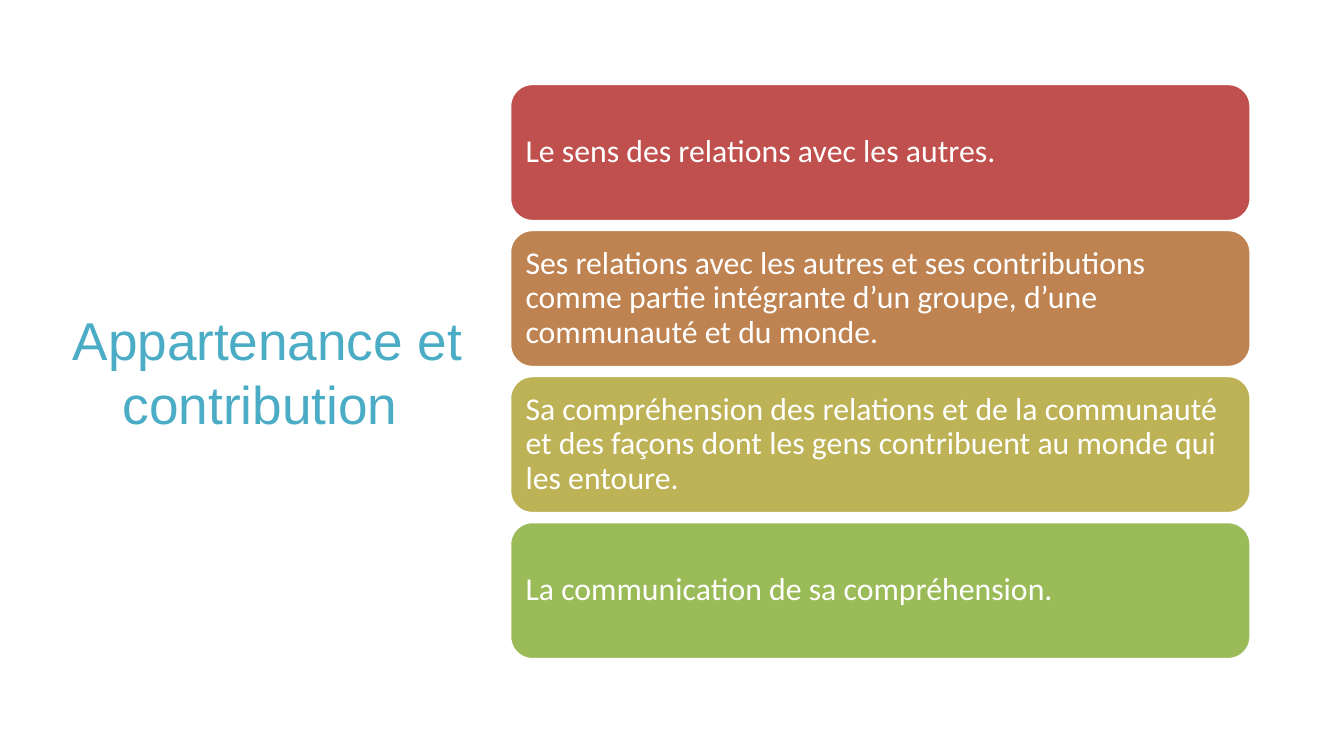
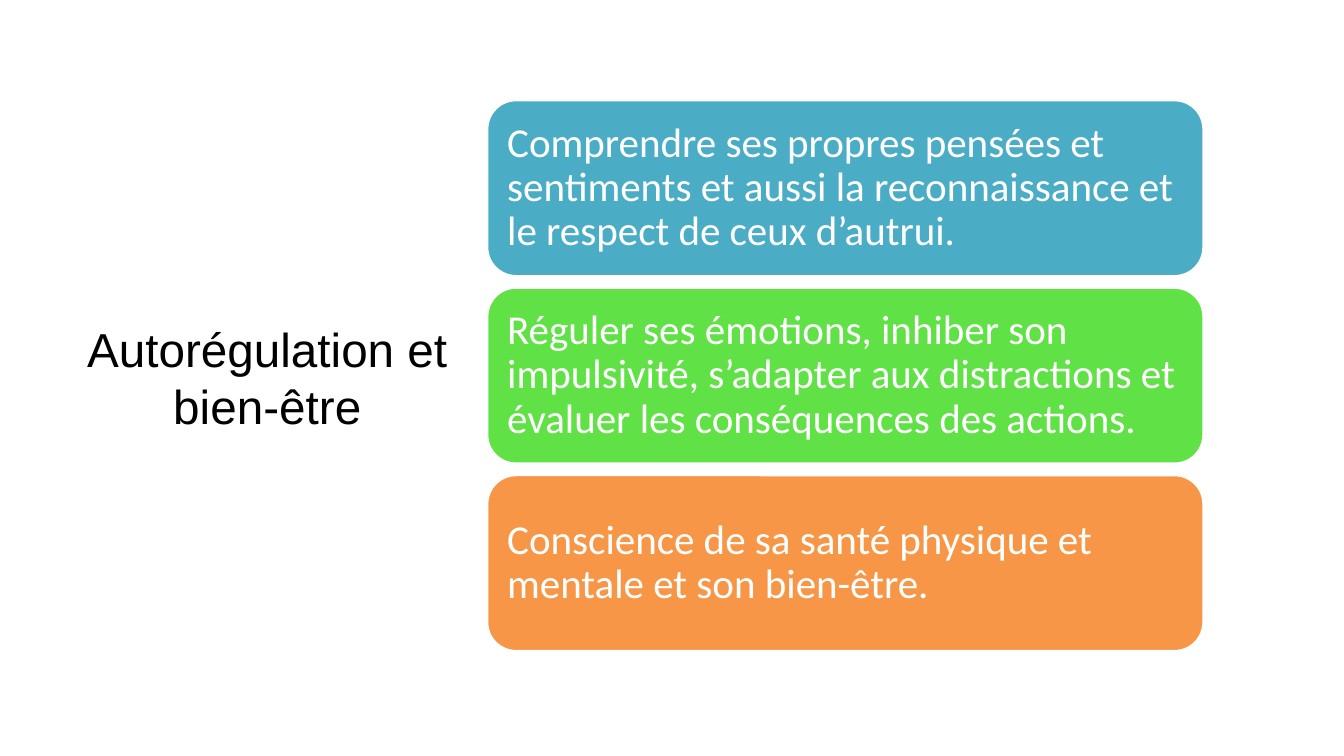
from pptx import Presentation
from pptx.dml.color import RGBColor
from pptx.enum.shapes import MSO_SHAPE
from pptx.enum.text import MSO_ANCHOR, PP_ALIGN
from pptx.util import Inches, Pt

WHITE = RGBColor(0xFF, 0xFF, 0xFF)
BLACK = RGBColor(0x00, 0x00, 0x00)
RED = RGBColor(0xC0, 0x50, 0x4D)
BROWN = RGBColor(0xBE, 0x83, 0x51)
OLIVE = RGBColor(0xBD, 0xB2, 0x55)
GREEN = RGBColor(0x9B, 0xBB, 0x59)
TEAL = RGBColor(0x4B, 0xAC, 0xC6)
LIME = RGBColor(0x60, 0xE1, 0x46)
ORANGE = RGBColor(0xF7, 0x96, 0x46)


def set_text(sp, text, font, size, color, align=PP_ALIGN.LEFT, inset=0.08, spacing=1.0):
    tf = sp.text_frame
    tf.word_wrap = True
    tf.vertical_anchor = MSO_ANCHOR.MIDDLE
    tf.margin_left = tf.margin_right = Inches(inset)
    tf.margin_top = tf.margin_bottom = Inches(inset)
    p = tf.paragraphs[0]
    p.alignment = align
    p.line_spacing = spacing
    r = p.add_run()
    r.text = text
    r.font.name = font
    r.font.size = Pt(size)
    r.font.color.rgb = color


slides = [
    {
        "title": "Appartenance et contribution ",
        "title_box": (0.43, 0.51, 3.12, 4.51),
        "title_size": 28.5,
        "title_color": TEAL,
        "first_card": (3.79, 0.62, 5.52, 1.03),
        "last_top": 3.88,
        "card_size": 17,
        "inset": 0.07,
        "cards": [
            (RED, "Le sens des relations avec les autres."),
            (BROWN, "Ses relations avec les autres et ses contributions comme partie "
                    "intégrante d’un groupe, d’une communauté et du monde."),
            (OLIVE, "Sa compréhension des relations et de la communauté et des façons "
                    "dont les gens contribuent au monde qui les entoure."),
            (GREEN, "La communication de sa compréhension."),
        ],
    },
    {
        "title": "Autorégulation et bien-être",
        "title_box": (0.51, 0.95, 2.96, 3.71),
        "title_size": 25.5,
        "title_color": BLACK,
        "first_card": (3.62, 0.74, 5.34, 1.32),
        "last_top": 3.53,
        "card_size": 22,
        "inset": 0.09,
        "cards": [
            (TEAL, "Comprendre ses propres pensées et sentiments et aussi la "
                   "reconnaissance et le respect de ceux d’autrui."),
            (LIME, "Réguler ses émotions, inhiber son impulsivité, s’adapter aux "
                   "distractions et évaluer les conséquences des actions."),
            (ORANGE, "Conscience de sa santé physique et mentale et son bien-être."),
        ],
    },
]

prs = Presentation()
prs.slide_width = Inches(10)
prs.slide_height = prs.slide_width * 9 // 16

for data in slides:
    s = prs.slides.add_slide(prs.slide_layouts[6])
    title = s.shapes.add_textbox(*[Inches(v) for v in data["title_box"]])
    set_text(title, data["title"], font="Arial", size=data["title_size"],
             color=data["title_color"], align=PP_ALIGN.CENTER)

    left, top, width, height = data["first_card"]
    pitch = (data["last_top"] - top) / (len(data["cards"]) - 1)
    for i, (fill, text) in enumerate(data["cards"]):
        sp = s.shapes.add_shape(MSO_SHAPE.ROUNDED_RECTANGLE, Inches(left),
                                Inches(top + i * pitch), Inches(width), Inches(height))
        sp.shadow.inherit = False
        sp.fill.solid()
        sp.fill.fore_color.rgb = fill
        sp.line.color.rgb = WHITE
        sp.line.width = Pt(2)
        set_text(sp, text, font="Calibri", size=data["card_size"], color=WHITE,
                 inset=data["inset"], spacing=0.9)

prs.save("out.pptx")
